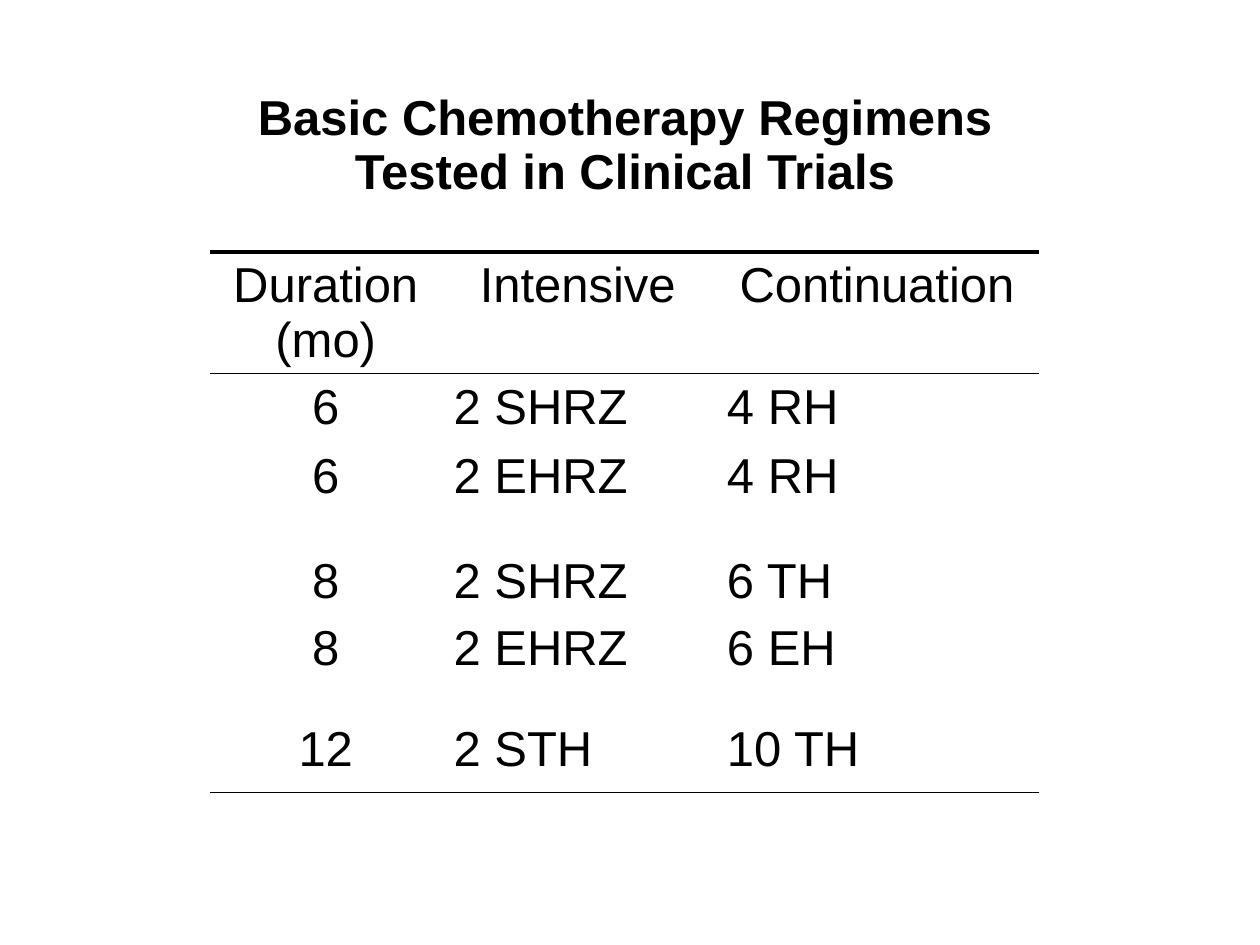
from lxml import etree
from pptx import Presentation
from pptx.dml.color import RGBColor
from pptx.enum.text import MSO_ANCHOR, PP_ALIGN
from pptx.oxml.ns import qn
from pptx.util import Inches, Pt

CENTER, LEFT = PP_ALIGN.CENTER, PP_ALIGN.LEFT
TOP = MSO_ANCHOR.TOP
COLORS = {"ink": "000000"}
FONT = "Arial"
FONT_SIZE = 28
THICK, THIN = 2.25, 0.5

TITLE = "Basic Chemotherapy Regimens Tested in Clinical Trials"
HEADINGS = ("Duration (mo)", "Intensive", "Continuation")
REGIMENS = (
    ("6", "2 SHRZ", "4 RH"),
    ("6", "2 EHRZ", "4 RH"),
    ("8", "2 SHRZ", "6 TH"),
    ("8", "2 EHRZ", "6 EH"),
    ("12", "2 STH", "10 TH"),
)
COLUMN_WIDTHS = (1.83, 2.17, 2.58)
ROW_HEIGHTS = (1.33, 0.8, 0.55, 0.83, 0.48, 0.8, 0.61)
# Line width in points under each ruled row
RULES_BELOW = {0: THICK, 1: THIN, len(ROW_HEIGHTS) - 1: THIN}


def set_borders(cell, above, below):
    """Rule the top and bottom edges by width in points; None means no line."""
    properties = cell._tc.get_or_add_tcPr()
    edges = {"a:lnL": None, "a:lnR": None, "a:lnT": above, "a:lnB": below}
    for tag, width in edges.items():
        line = etree.SubElement(properties, qn(tag))
        if width is None:
            etree.SubElement(line, qn("a:noFill"))
            continue
        line.set("w", str(Pt(width)))
        fill = etree.SubElement(line, qn("a:solidFill"))
        etree.SubElement(fill, qn("a:srgbClr"), val=COLORS["ink"])


def write_cell(cell, text, alignment, bold=False):
    cell.text = text
    cell.vertical_anchor = TOP
    para = cell.text_frame.paragraphs[0]
    para.alignment = alignment
    para.font.name = FONT
    para.font.size = Pt(FONT_SIZE)
    para.font.bold = bold
    para.font.color.rgb = RGBColor.from_string(COLORS["ink"])


def add_regimen_table(page, left, top, width, height):
    table = page.shapes.add_table(
        len(ROW_HEIGHTS), len(COLUMN_WIDTHS), left, top, width, height
    ).table
    table.first_row = False
    table.horz_banding = False
    for column, column_width in zip(table.columns, COLUMN_WIDTHS):
        column.width = Inches(column_width)
    for index, (row, row_height) in enumerate(zip(table.rows, ROW_HEIGHTS)):
        row.height = Inches(row_height)
        for cell in row.cells:
            set_borders(cell, RULES_BELOW.get(index - 1), RULES_BELOW.get(index))
            cell.fill.background()

    last_column = len(COLUMN_WIDTHS) - 1
    table.cell(0, 0).merge(table.cell(0, last_column))
    write_cell(table.cell(0, 0), TITLE, CENTER, bold=True)
    for row_index, texts in enumerate((HEADINGS, *REGIMENS), start=1):
        for column_index, text in enumerate(texts):
            centered = row_index == 1 or column_index == 0
            write_cell(table.cell(row_index, column_index), text,
                       CENTER if centered else LEFT)


def main():
    deck = Presentation()
    deck.slide_width, deck.slide_height = Inches(10), Inches(7.5)
    page = deck.slides.add_slide(deck.slide_layouts[6])
    add_regimen_table(page, Inches(1.67), Inches(0.67),
                      Inches(sum(COLUMN_WIDTHS)), Inches(sum(ROW_HEIGHTS)))
    deck.save("out.pptx")


if __name__ == "__main__":
    main()
